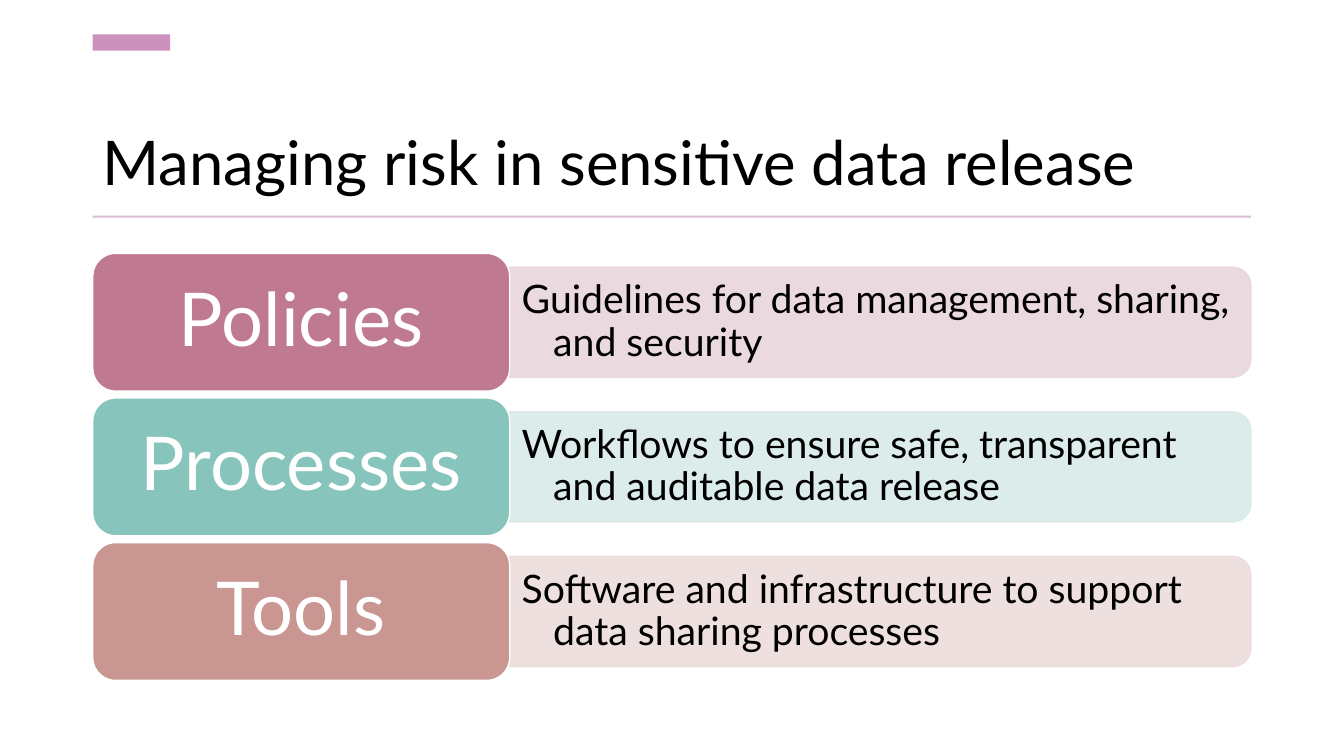
from lxml import etree
from pptx import Presentation
from pptx.dml.color import RGBColor
from pptx.enum.shapes import MSO_SHAPE
from pptx.enum.text import MSO_ANCHOR, PP_ALIGN
from pptx.oxml.ns import qn
from pptx.util import Pt

RECT = MSO_SHAPE.RECTANGLE
ROUNDED = MSO_SHAPE.ROUNDED_RECTANGLE
TOP_ROUNDED = MSO_SHAPE.ROUND_2_SAME_RECTANGLE
MIDDLE, BOTTOM = MSO_ANCHOR.MIDDLE, MSO_ANCHOR.BOTTOM
LEFT, CENTER = PP_ALIGN.LEFT, PP_ALIGN.CENTER

FONT = "Lato"
MARGIN, CONTENT_WIDTH = 66.24, 827.3
LABEL_SHARE, BAR_SHARE = 0.36, 0.8
ROW_HEIGHT, ROW_PITCH = 98.4, 103.3
ROWS = [
    ("Policies", "Guidelines for data management, sharing, and security", "BF7A91", "E8D7DC"),
    ("Processes", "Workflows to ensure safe, transparent and auditable data release", "86C4BC", "D9EAE8"),
    ("Tools", "Software and infrastructure to support data sharing processes", "CA9692", "ECDDDC"),
]


def color(value):
    """Turn a hex string into a colour."""
    return RGBColor.from_string(value)


def add_block(slide, kind, box, fill, line=None):
    """Add a flat filled shape with an optional one-point outline."""
    block = slide.shapes.add_shape(kind, *map(Pt, box))
    block.shadow.inherit = False
    block.fill.solid()
    block.fill.fore_color.rgb = color(fill)
    if line:
        block.line.color.rgb = color(line)
        block.line.width = Pt(1)
    else:
        block.line.fill.background()
    return block


def write(holder, text, size, ink, anchor, align, insets, hanging=0):
    """Write one paragraph into a shape or text box."""
    frame = holder.text_frame
    side, end = map(Pt, insets)
    frame_format = {
        "word_wrap": True, "vertical_anchor": anchor,
        "margin_left": side, "margin_right": side,
        "margin_top": end, "margin_bottom": end,
    }
    paragraph = frame.paragraphs[0]
    paragraph.text = text
    for target, values in (
        (frame, frame_format),
        (paragraph, {"alignment": align, "line_spacing": 0.9}),
        (paragraph.font, {"name": FONT, "size": Pt(size)}),
    ):
        for key, value in values.items():
            setattr(target, key, value)
    paragraph.font.color.rgb = color(ink)
    if hanging:
        properties = paragraph._p.get_or_add_pPr()
        properties.set("marL", str(Pt(hanging)))
        properties.set("indent", str(-Pt(hanging)))


def add_heading(slide, left, top, width, height):
    """Place the accent, title and rule in the heading area."""
    add_block(slide, RECT, (left, top, 55.4, 11.7), "CA92BD")
    title = slide.shapes.add_textbox(*map(Pt, (left, top + 29.5, width, 91.4)))
    write(title, "Managing risk in sensitive data release", 44, "000000", BOTTOM, LEFT, (7.2, 3.6))
    add_block(slide, RECT, (left, top + height - 1.4, width, 1.4), "DBBDD3")


def add_row(slide, left, top, width, height, row):
    """Place a label and its description bar side by side."""
    name, description, strong, pale = row
    label_width = width * LABEL_SHARE
    bar_left, bar_width = left + label_width, width - label_width
    bar_height = height * BAR_SHARE
    bar_top = top + (height - bar_height) / 2
    turn = (bar_width - bar_height) / 2
    bar = add_block(
        slide, TOP_ROUNDED, (bar_left + turn, bar_top - turn, bar_height, bar_width), pale, pale)
    bar.rotation = 90
    for tint in bar._element.spPr.iter(qn("a:srgbClr")):
        etree.SubElement(tint, qn("a:alpha"), val="90000")
    detail = slide.shapes.add_textbox(
        *map(Pt, (bar_left, bar_top + 3.8, bar_width - 3.8, bar_height - 7.6)))
    write(detail, description, 28, "000000", MIDDLE, LEFT, (8.6, 4.3), 22.5)
    label = add_block(slide, ROUNDED, (left, top, label_width, height), strong, "FFFFFF")
    write(label, name, 53, "FFFFFF", MIDDLE, CENTER, (20.6, 12.7))


def main():
    """Build and save the slide."""
    deck = Presentation()
    deck.slide_width, deck.slide_height = Pt(960), Pt(540)
    slide = deck.slides.add_slide(deck.slide_layouts[6])
    add_heading(slide, MARGIN, 24.5, CONTENT_WIDTH, 131)
    for index, row in enumerate(ROWS):
        add_row(slide, MARGIN, 181 + index * ROW_PITCH, CONTENT_WIDTH, ROW_HEIGHT, row)
    deck.save("out.pptx")


if __name__ == "__main__":
    main()
